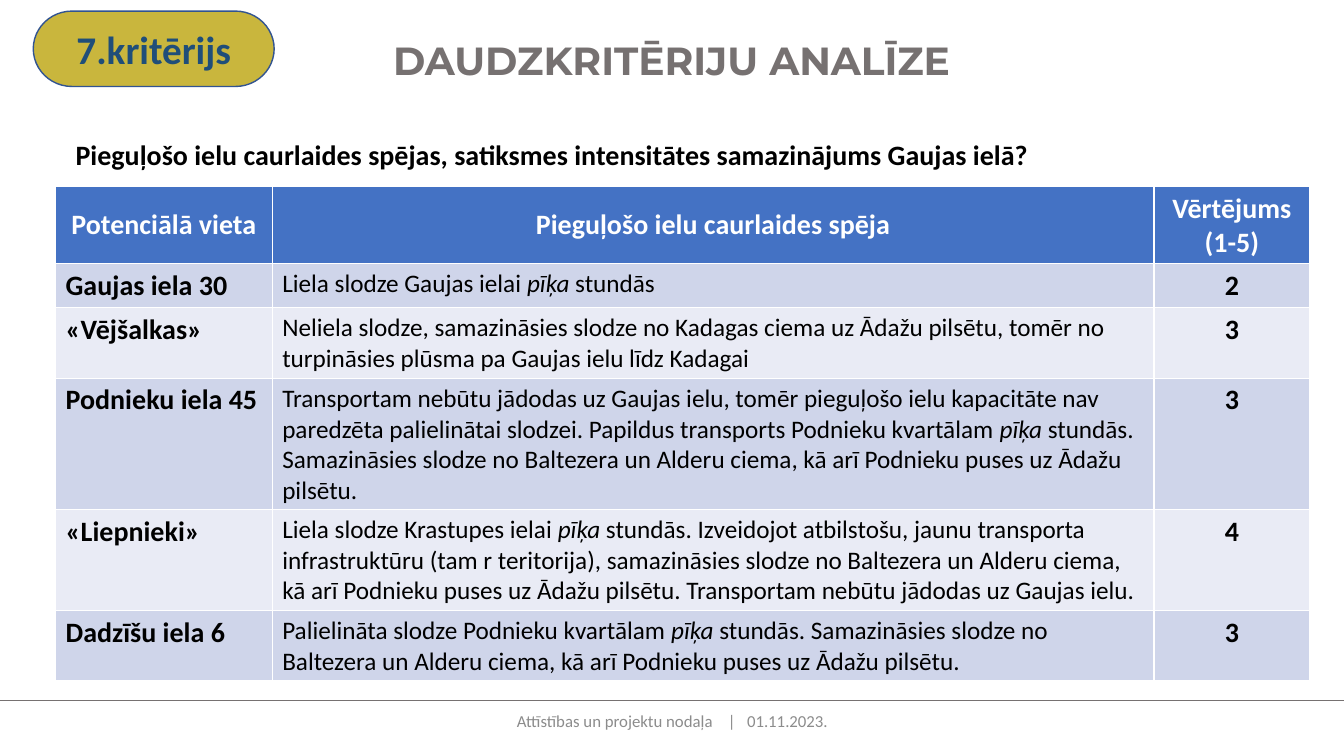
from lxml.etree import SubElement
from pptx import Presentation
from pptx.dml.color import RGBColor as Rgb
from pptx.enum.shapes import MSO_CONNECTOR as Link, MSO_SHAPE as Kind
from pptx.enum.text import MSO_ANCHOR as Anchor, MSO_AUTO_SIZE as Fit, PP_ALIGN as Align
from pptx.oxml.ns import qn
from pptx.util import Cm, Pt

HUES = {
    "white": "FFFFFF", "black": "000000", "grey": "767171", "pale": "8C8C8C",
    "head": "4472C4", "odd": "CFD5EA", "even": "E9EBF5",
    "gold": "C9B63D", "edge": "325491", "navy": "1F4E79",
}
TERM = "pīķa"


def hue(name):
    return Rgb.from_string(HUES[name])


def write(para, text, color, align=Align.LEFT, **look):
    """Add text as a run with the given font values."""
    para.alignment = align
    run = para.add_run()
    run.text = text
    for key, val in ({"name": "Calibri"} | look).items():
        setattr(run.font, key, val)
    run.font.color.rgb = hue(color)
    return run


deck = Presentation()
deck.slide_width, deck.slide_height = Cm(33.87), Cm(19.05)
slide = deck.slides.add_slide(deck.slide_layouts[1])
shapes = slide.shapes
title, body = slide.placeholders

# Footer
foot = shapes.add_textbox(Cm(11.23), Cm(17.65), Cm(11.43), Cm(1.02)).text_frame
foot.word_wrap = True
foot.vertical_anchor = Anchor.MIDDLE
parts = [("Attīstības un projektu nodaļa", 0), (" ", 800), ("|", 0), (" ", 540), ("01.11.2023.", 0)]
for text, gap in parts:
    run = write(foot.paragraphs[0], text, "pale", Align.CENTER, size=Pt(12))
    run.font._element.set("spc", str(gap))

rule = shapes.add_connector(Link.STRAIGHT, 0, Cm(17.65), deck.slide_width, Cm(17.65))
rule.line.color.rgb = hue("grey")
rule.line.width = Pt(0.5)
SubElement(rule._element.spPr, qn("a:effectLst"))

# Title and question
spots = [(title, (1.12, 0.79, 31.6, 1.45)), (body, (1.65, 3.43, 31.09, 0.86))]
for box, spot in spots:
    box.left, box.top, box.width, box.height = map(Cm, spot)
    box.text_frame.auto_size = Fit.NONE
    box.text_frame.vertical_anchor = Anchor.TOP
write(title.text_frame.paragraphs[0], "DAUDZKRITĒRIJU ANALĪZE", "grey", Align.CENTER,
      name="Montserrat", size=Pt(28), bold=True)
ask = body.text_frame.paragraphs[0]
write(ask, "Pieguļošo ielu caurlaides spējas, satiksmes intensitātes samazinājums Gaujas ielā?",
      "black", size=Pt(20), bold=True)
ask.line_spacing, ask.space_before = 0.9, Pt(10)
props = ask._p.get_or_add_pPr()
props.set("marL", "0")
props.set("indent", "0")
SubElement(props, qn("a:buNone"))

# Table
rows = [
    ("Potenciālā vieta", "Pieguļošo ielu caurlaides spēja", "Vērtējums (1-5)"),
    ("Gaujas iela 30", "Liela slodze Gaujas ielai pīķa stundās", "2"),
    ("«Vējšalkas»", "Neliela slodze, samazināsies slodze no Kadagas ciema uz Ādažu pilsētu, "
     "tomēr no turpināsies plūsma pa Gaujas ielu līdz Kadagai", "3"),
    ("Podnieku iela 45", "Transportam nebūtu jādodas uz Gaujas ielu, tomēr pieguļošo ielu "
     "kapacitāte nav paredzēta palielinātai slodzei. Papildus transports Podnieku kvartālam "
     "pīķa stundās. Samazināsies slodze no Baltezera un Alderu ciema, kā arī Podnieku puses "
     "uz Ādažu pilsētu.", "3"),
    ("«Liepnieki»", "Liela slodze Krastupes ielai pīķa stundās. Izveidojot atbilstošu, jaunu "
     "transporta infrastruktūru (tam r teritorija), samazināsies slodze no Baltezera un "
     "Alderu ciema, kā arī Podnieku puses uz Ādažu pilsētu. Transportam nebūtu jādodas uz "
     "Gaujas ielu.", "4"),
    ("Dadzīšu iela 6", "Palielināta slodze Podnieku kvartālam pīķa stundās. Samazināsies "
     "slodze no Baltezera un Alderu ciema, kā arī Podnieku puses uz Ādažu pilsētu.", "3"),
]
wides = (5.46, 22.22, 3.93)
highs = (1.92, 1.1, 1.77, 3.3, 2.55, 1.78)
grid = shapes.add_table(len(rows), len(wides), Cm(1.4), Cm(4.7),
                        Cm(sum(wides)), Cm(sum(highs))).table
for col, wide in zip(grid.columns, wides):
    col.width = Cm(wide)
for r, (row, high) in enumerate(zip(rows, highs)):
    grid.rows[r].height = Cm(high)
    fill = "head" if r == 0 else "odd" if r % 2 else "even"
    for c, text in enumerate(row):
        cell = grid.cell(r, c)
        cell.fill.solid()
        cell.fill.fore_color.rgb = hue(fill)
        cell.vertical_anchor = Anchor.TOP if r else Anchor.MIDDLE
        plain = r > 0 and c == 1
        for piece in filter(None, text.partition(TERM)):
            write(cell.text_frame.paragraphs[0], piece, "black" if r else "white",
                  Align.CENTER if r == 0 or c == 2 else Align.LEFT,
                  size=Pt(18 if plain else 20), bold=not plain, italic=piece == TERM)

# Criterion badge
badge = shapes.add_shape(Kind.FLOWCHART_TERMINATOR, Cm(0.84), Cm(0.28), Cm(6.07), Cm(1.9))
badge.shadow.inherit = False
badge.fill.solid()
badge.fill.fore_color.rgb = hue("gold")
badge.line.color.rgb = hue("edge")
badge.line.width = Pt(1)
badge.text_frame.vertical_anchor = Anchor.MIDDLE
write(badge.text_frame.paragraphs[0], "7.kritērijs", "navy", Align.CENTER, size=Pt(28), bold=True)

deck.save("out.pptx")
